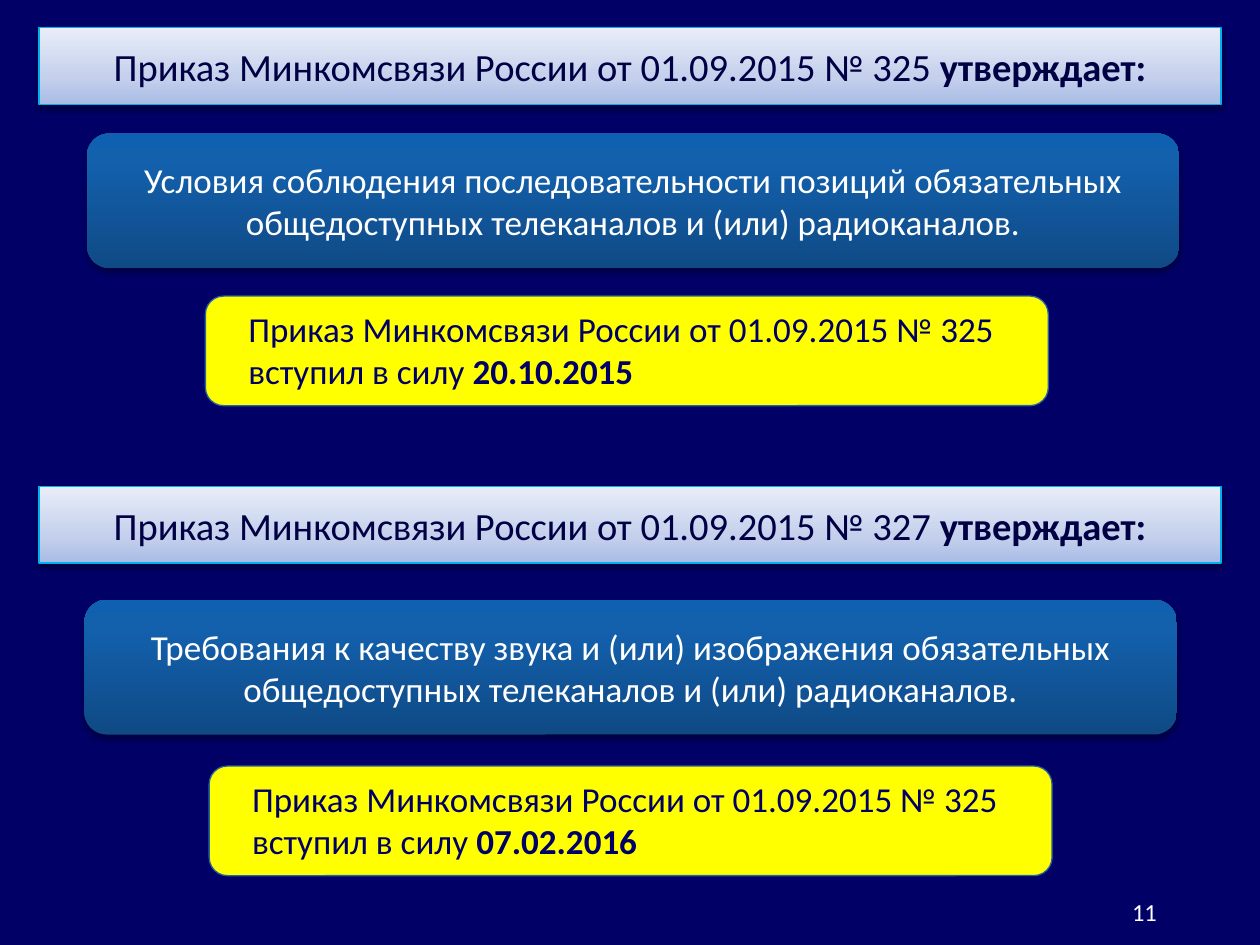
from dataclasses import dataclass
from typing import Optional
import copy

import lxml.etree
import pptx
import pptx.dml.color
import pptx.enum.shapes
import pptx.enum.text
import pptx.oxml.ns
import pptx.util

Inches = pptx.util.Inches
Pt = pptx.util.Pt
Align = pptx.enum.text.PP_ALIGN
Anchor = pptx.enum.text.MSO_ANCHOR
Preset = pptx.enum.shapes.MSO_SHAPE
qn = pptx.oxml.ns.qn

Run = tuple[str, bool]


@dataclass(frozen=True)
class Shadow:
    opacity: int
    blur: float
    distance: float


@dataclass(frozen=True)
class Style:
    preset: Preset
    width: float
    height: float
    fills: tuple[tuple[float, str], ...]
    text_color: str
    text_size: int
    align: Align
    anchor: Anchor
    line: Optional[str] = None
    shadow: Optional[Shadow] = None
    first_indent: float = 0


@dataclass(frozen=True)
class Box:
    style: Style
    left: float
    top: float
    paragraphs: list[list[Run]]


HEADING = Style(
    Preset.RECTANGLE, 9.38, 0.61,
    ((0, "A9BCE6"), (0.35, "C4D0EC"), (1, "E8EDF8")),
    "000044", 22, Align.CENTER, Anchor.MIDDLE,
    line="00B0F0", shadow=Shadow(38, 3.1, 1.6),
)
SUBJECT = Style(
    Preset.ROUNDED_RECTANGLE, 8.67, 1.07,
    ((0, "0F4A85"), (0.8, "1360AD"), (1, "1060B1")),
    "FFFFFF", 20, Align.CENTER, Anchor.MIDDLE,
    shadow=Shadow(35, 3.1, 1.8),
)
EFFECTIVE_DATE = Style(
    Preset.ROUNDED_RECTANGLE, 6.69, 0.87, ((0, "FFFF00"),),
    "000066", 20, Align.JUSTIFY, Anchor.TOP,
    line="2663A0", first_indent=0.2,
)


def color(value: str) -> pptx.dml.color.RGBColor:
    return pptx.dml.color.RGBColor.from_string(value)


def add_run(paragraph, text: str, size: int, text_color: str, bold: bool = False) -> None:
    run = paragraph.add_run()
    run.text = text
    run.font.name = "Calibri"
    run.font.size = Pt(size)
    run.font.bold = bold
    run.font.color.rgb = color(text_color)


def paint(shape, fills: tuple[tuple[float, str], ...]) -> None:
    if len(fills) == 1:
        shape.fill.solid()
        shape.fill.fore_color.rgb = color(fills[0][1])
        return
    shape.fill.gradient()
    shape.fill.gradient_angle = 90
    stop_list = shape.element.spPr.find(".//" + qn("a:gsLst"))
    while len(stop_list) < len(fills):
        stop_list.append(copy.deepcopy(stop_list[0]))
    for stop, (position, value) in zip(shape.fill.gradient_stops, fills):
        stop.position = position
        stop.color.rgb = color(value)


def cast_shadow(shape, shadow: Shadow) -> None:
    effects = shape.element.spPr.find(qn("a:effectLst"))
    outer = lxml.etree.SubElement(
        effects, qn("a:outerShdw"), blurRad=str(Pt(shadow.blur)),
        dist=str(Pt(shadow.distance)), dir="5400000", rotWithShape="0",
    )
    black = lxml.etree.SubElement(outer, qn("a:srgbClr"), val="000000")
    lxml.etree.SubElement(black, qn("a:alpha"), val=str(shadow.opacity * 1000))


def add_box(slide, box: Box) -> None:
    style = box.style
    shape = slide.shapes.add_shape(
        style.preset, Inches(box.left), Inches(box.top),
        Inches(style.width), Inches(style.height),
    )
    shape.shadow.inherit = False
    paint(shape, style.fills)
    if style.line:
        shape.line.color.rgb = color(style.line)
        shape.line.width = Pt(0.75)
    else:
        shape.line.fill.background()
    if style.shadow:
        cast_shadow(shape, style.shadow)
    frame = shape.text_frame
    frame.word_wrap = True
    frame.vertical_anchor = style.anchor
    for index, runs in enumerate(box.paragraphs):
        paragraph = frame.add_paragraph() if index else frame.paragraphs[0]
        paragraph.alignment = style.align
        if style.first_indent:
            properties = paragraph._p.get_or_add_pPr()
            properties.set("marL", "0")
            properties.set("indent", str(Inches(style.first_indent)))
        for text, bold in runs:
            add_run(paragraph, text, style.text_size, style.text_color, bold)


def add_page_number(slide, number: str) -> None:
    text_box = slide.shapes.add_textbox(Inches(7.2), Inches(6.9), Inches(2.08), Inches(0.5))
    frame = text_box.text_frame
    frame.word_wrap = True
    frame.vertical_anchor = Anchor.BOTTOM
    paragraph = frame.paragraphs[0]
    paragraph.alignment = Align.RIGHT
    add_run(paragraph, number, 14, "FFFFFF")


def heading(order: str) -> list[list[Run]]:
    return [[(f"Приказ Минкомсвязи России от 01.09.2015 № {order} ", False), ("утверждает:", True)]]


def subject(opening: str) -> list[list[Run]]:
    return [[(f"{opening} обязательных общедоступных телеканалов и (или) радиоканалов.", False)]]


def effective(date: str) -> list[list[Run]]:
    return [
        [("Приказ Минкомсвязи России от 01.09.2015 № 325", False)],
        [("вступил в силу ", False), (date, True)],
    ]


def main() -> None:
    presentation = pptx.Presentation()
    presentation.slide_width = Inches(10)
    presentation.slide_height = Inches(7.5)
    slide = presentation.slides.add_slide(presentation.slide_layouts[6])
    slide.background.fill.solid()
    slide.background.fill.fore_color.rgb = color("000066")

    add_page_number(slide, "11")
    boxes = [
        Box(HEADING, 0.31, 0.22, heading("325")),
        Box(SUBJECT, 0.69, 1.06, subject("Условия соблюдения последовательности позиций")),
        Box(EFFECTIVE_DATE, 1.63, 2.35, effective("20.10.2015")),
        Box(HEADING, 0.31, 3.86, heading("327")),
        Box(SUBJECT, 0.67, 4.76, subject("Требования к качеству звука и (или) изображения")),
        Box(EFFECTIVE_DATE, 1.66, 6.08, effective("07.02.2016")),
    ]
    for box in boxes:
        add_box(slide, box)
    presentation.save("out.pptx")


if __name__ == "__main__":
    main()
